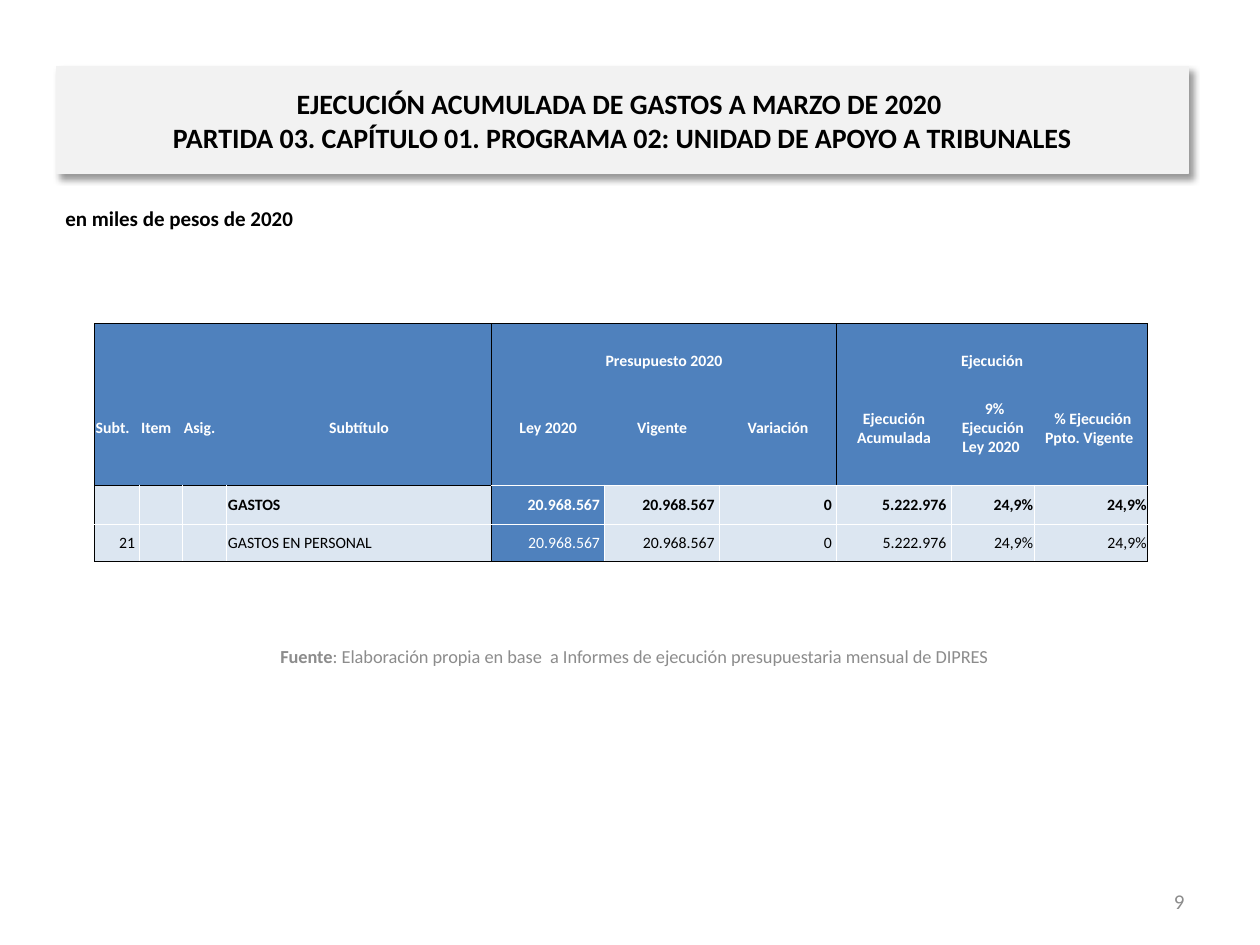
from lxml.etree import SubElement
from pptx import Presentation
from pptx.dml.color import RGBColor
from pptx.enum.text import MSO_ANCHOR as ANCHOR, PP_ALIGN as ALIGN
from pptx.oxml.ns import qn
from pptx.util import Inches, Pt

FONT = "Calibri"
COLORS = {
    "black": "000000",
    "white": "FFFFFF",
    "gray": "8C8C8C",
    "panel": "F2F2F2",
    "blue": "4F81BD",
    "pale": "DCE6F1",
}
COL_WIDTHS = [0.36, 0.34, 0.35, 2.1, 0.9, 0.91, 0.93, 0.91, 0.66, 0.9]
ROW_HEIGHTS = [0.37, 0.91, 0.31, 0.3]
ROWS = [
    ["", "", "", "", "Presupuesto 2020", "", "", "Ejecución", "", ""],
    ["Subt.", "Item", "Asig.", "Subtítulo", "Ley 2020", "Vigente", "Variación",
     "Ejecución Acumulada", " 9% Ejecución Ley 2020 ", " % Ejecución Ppto. Vigente "],
    ["", "", "", "GASTOS", "20.968.567 ", "20.968.567 ", "0 ", "5.222.976 ", "24,9%", "24,9%"],
    ["21 ", "", "", "GASTOS EN PERSONAL", "20.968.567 ", "20.968.567 ", "0 ", "5.222.976 ",
     "24,9%", "24,9%"],
]
HEADER_ROWS = 2
LABEL_COL, LAW_COL, EXEC_COL = 3, 4, 7
NO_STYLE = "{2D5ABB26-0587-4C30-8999-92F81FD0307C}"


def rgb(name):
    return RGBColor.from_string(COLORS[name])


def format_run(r, size, color, bold=False):
    r.font.name = FONT
    r.font.size = Pt(size)
    r.font.bold = bold
    r.font.color.rgb = rgb(color)


def add_color(parent, color):
    fill = SubElement(parent, qn("a:solidFill"))
    return SubElement(fill, qn("a:srgbClr"), val=COLORS[color])


def add_shadow(sp):
    effects = SubElement(sp._element.spPr, qn("a:effectLst"))
    shadow = SubElement(effects, qn("a:outerShdw"), blurRad=str(Pt(4)), dist=str(Pt(3)),
                        dir="2700000", algn="tl", rotWithShape="0")
    color = SubElement(shadow, qn("a:srgbClr"), val=COLORS["black"])
    SubElement(color, qn("a:alpha"), val="40000")


def add_title(slide, x, y, w, h):
    sp = slide.shapes.title
    sp.left, sp.top, sp.width, sp.height = x, y, w, h
    sp.fill.solid()
    sp.fill.fore_color.rgb = rgb("panel")
    sp.line.color.rgb = rgb("panel")
    sp.line.width = Pt(0.75)
    add_shadow(sp)
    tf = sp.text_frame
    tf.text = ("EJECUCIÓN ACUMULADA DE GASTOS A MARZO DE 2020 \v"
               "PARTIDA 03. CAPÍTULO 01. PROGRAMA 02: UNIDAD DE APOYO A TRIBUNALES")
    tf.vertical_anchor = ANCHOR.MIDDLE
    tf.margin_left = tf.margin_right = Inches(0.11)
    p = tf.paragraphs[0]
    p.alignment = ALIGN.CENTER
    for r in p.runs:
        format_run(r, 16, "black", True)


def add_text(slide, x, y, w, h, parts, size, color, align, anchor=ANCHOR.MIDDLE):
    tf = slide.shapes.add_textbox(x, y, w, h).text_frame
    tf.word_wrap = True
    tf.vertical_anchor = anchor
    p = tf.paragraphs[0]
    p.alignment = align
    for text, bold in parts:
        r = p.add_run()
        r.text = text
        format_run(r, size, color, bold)


def vertical_edge(row, col):
    if col in (0, LAW_COL, len(COL_WIDTHS)):
        return "black"
    if row < HEADER_ROWS:
        return "black" if col == EXEC_COL else None
    return "white"


def horizontal_edge(row, col):
    if row in (0, len(ROW_HEIGHTS)):
        return "black"
    if row < HEADER_ROWS:
        return None
    return "black" if row == HEADER_ROWS and col < LAW_COL else "white"


def set_borders(cell, row, col):
    tc_pr = cell._tc.get_or_add_tcPr()
    span = cell.span_width if cell.is_merge_origin else 1
    edges = {
        "a:lnL": vertical_edge(row, col),
        "a:lnR": vertical_edge(row, col + span),
        "a:lnT": horizontal_edge(row, col),
        "a:lnB": horizontal_edge(row + 1, col),
    }
    for tag, color in edges.items():
        ln = SubElement(tc_pr, qn(tag), w=str(Pt(0.5)))
        if color:
            add_color(ln, color)
        else:
            SubElement(ln, qn("a:noFill"))


def cell_align(row, col):
    if row < HEADER_ROWS:
        return ALIGN.LEFT if col < LABEL_COL else ALIGN.CENTER
    return ALIGN.LEFT if col == LABEL_COL else ALIGN.RIGHT


def format_cell(cell, row, col, text):
    dark = row < HEADER_ROWS or col == LAW_COL
    cell.margin_left = cell.margin_right = cell.margin_top = Inches(0.01)
    cell.margin_bottom = 0
    cell.vertical_anchor = ANCHOR.BOTTOM if row == 0 else ANCHOR.MIDDLE
    set_borders(cell, row, col)
    cell.fill.solid()
    cell.fill.fore_color.rgb = rgb("blue" if dark else "pale")
    cell.text_frame.text = text
    p = cell.text_frame.paragraphs[0]
    p.alignment = cell_align(row, col)
    for r in p.runs:
        format_run(r, 9, "white" if dark else "black", row <= HEADER_ROWS)
    if not text:
        SubElement(p._p, qn("a:endParaRPr"), sz="900")


def add_budget_table(slide, x, y):
    frame = slide.shapes.add_table(len(ROW_HEIGHTS), len(COL_WIDTHS), x, y,
                                   Inches(sum(COL_WIDTHS)), Inches(sum(ROW_HEIGHTS)))
    table = frame.table
    table.first_row = table.horz_banding = False
    table._tbl.tblPr.find(qn("a:tableStyleId")).text = NO_STYLE
    for column, width in zip(table.columns, COL_WIDTHS):
        column.width = Inches(width)
    for row, height in zip(table.rows, ROW_HEIGHTS):
        row.height = Inches(height)
    for col in (LAW_COL, EXEC_COL):
        table.cell(0, col).merge(table.cell(0, col + 2))
    for row, texts in enumerate(ROWS):
        for col, text in enumerate(texts):
            format_cell(table.cell(row, col), row, col, text)


def main():
    prs = Presentation()
    prs.slide_width, prs.slide_height = Inches(10), Inches(7.5)
    slide = prs.slides.add_slide(prs.slide_layouts[5])
    add_title(slide, Inches(0.45), Inches(0.53), Inches(8.98), Inches(0.85))
    add_text(slide, Inches(0.42), Inches(1.58), Inches(9), Inches(0.5),
             [("en miles de pesos de 2020", True)], 12, "black", ALIGN.LEFT, ANCHOR.TOP)
    add_budget_table(slide, Inches(0.75), Inches(2.57))
    add_text(slide, Inches(0.44), Inches(5.01), Inches(9.19), Inches(0.4),
             [("Fuente", True),
              (": Elaboración propia en base  a Informes de ejecución presupuestaria "
               "mensual de DIPRES", False)], 10.5, "gray", ALIGN.CENTER)
    add_text(slide, Inches(7.17), Inches(6.95), Inches(2.33), Inches(0.4),
             [("9", False)], 12, "gray", ALIGN.RIGHT)
    prs.save("out.pptx")


if __name__ == "__main__":
    main()
